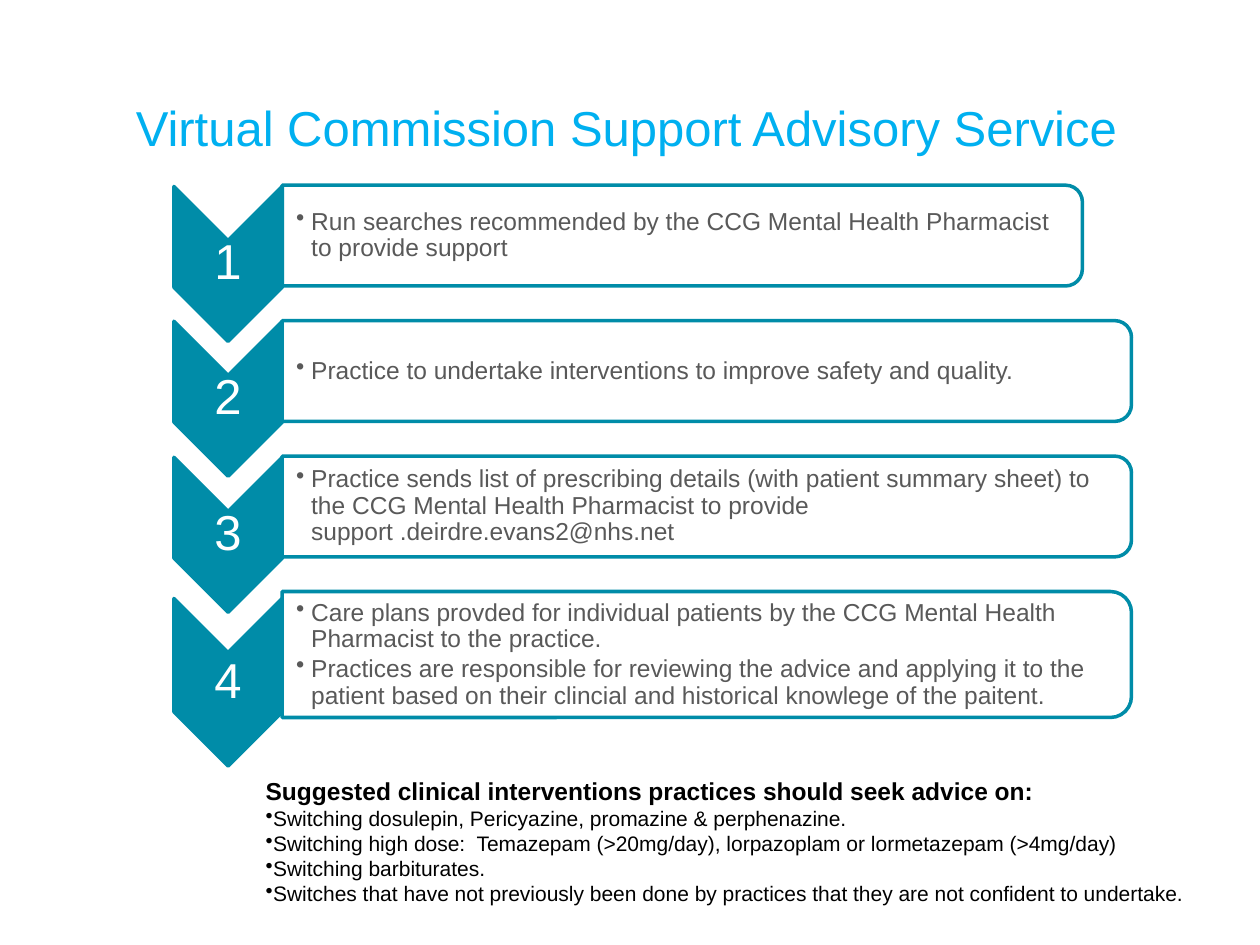
"""Build the Virtual Commission Support Advisory Service slide."""
import pptx
import pptx.util
import pptx.dml.color
import pptx.enum.shapes
import pptx.enum.text
import pptx.oxml.ns
from lxml import etree

Inches, Pt = pptx.util.Inches, pptx.util.Pt
SHAPE = pptx.enum.shapes.MSO_SHAPE
ALIGN = pptx.enum.text.PP_ALIGN
qn = pptx.oxml.ns.qn
TEAL = "008CA8"


def paint(color_format, value):
    color_format.rgb = pptx.dml.color.RGBColor.from_string(value)


def write(left, top, width, height, lines, size, color, align=None, insets=(0.1, 0.05, 0.1, 0.05),
          bullet_from=None, indent=0, spacing=None, after=None):
    frame = slide.shapes.add_textbox(Inches(left), Inches(top), Inches(width), Inches(height)).text_frame
    frame.word_wrap = True
    frame.vertical_anchor = pptx.enum.text.MSO_ANCHOR.MIDDLE
    frame.margin_left, frame.margin_top, frame.margin_right, frame.margin_bottom = map(Inches, insets)
    for index, line in enumerate(lines):
        paragraph = frame.paragraphs[0] if index == 0 else frame.add_paragraph()
        paragraph.text = line
        if bullet_from is not None and index >= bullet_from:
            properties = paragraph._p.get_or_add_pPr()
            properties.set("marL", str(Inches(indent)))
            properties.set("indent", str(-Inches(indent)))
            etree.SubElement(properties, qn("a:buChar")).set("char", "•")
        paragraph.alignment = align
        paragraph.line_spacing = spacing
        paragraph.space_after = after
        paragraph.font.name = "Arial"
        paragraph.font.size = Pt(size)
        paint(paragraph.font.color, color)
    return frame


prs = pptx.Presentation()
prs.slide_width, prs.slide_height = Inches(10), Inches(7.5)
slide = prs.slides.add_slide(prs.slide_layouts[6])

write(0.98, 0.72, 8.43, 0.57, ["Virtual Commission Support Advisory Service"], 28, "00B0F0")

steps = [
    (6.35, 0.8, 1.23, 1.48, ["Run searches recommended by the CCG Mental Health Pharmacist to provide support"]),
    (6.74, 0.8, 1.23, 2.55, ["Practice to undertake interventions to improve safety and quality."]),
    (6.74, 0.8, 1.23, 3.63, [
        "Practice sends list of prescribing details (with patient summary sheet) to the CCG Mental "
        "Health Pharmacist to provide support .deirdre.evans2@nhs.net"]),
    (6.74, 1, 1.33, 4.75, [
        "Care plans provded for individual patients by the CCG Mental Health Pharmacist to the practice.",
        "Practices are responsible for reviewing the advice and applying it to the patient based on "
        "their clincial and historical knowlege of the paitent."]),
]
chevron_left, chevron_width, panel_left = 1.38, 0.86, 2.24

for number, (panel_width, panel_height, chevron_height, chevron_top, lines) in enumerate(steps, 1):
    panel_top = 1.47 + 1.075 * (number - 1)
    parts = [
        (SHAPE.CHEVRON, chevron_left, chevron_top, chevron_width, chevron_height, TEAL),
        (SHAPE.ROUND_2_SAME_RECTANGLE, panel_left, panel_top, panel_width, panel_height, "FFFFFF"),
    ]
    for preset, left, top, width, height, fill in parts:
        part = slide.shapes.add_shape(
            preset, Inches(left + (width - height) / 2), Inches(top + (height - width) / 2),
            Inches(height), Inches(width))
        part.rotation = 90
        part.shadow.inherit = False
        part.fill.solid()
        paint(part.fill.fore_color, fill)
        paint(part.line.color, TEAL)
        part.line.width = Pt(2)
        if preset == SHAPE.ROUND_2_SAME_RECTANGLE:
            color = part.fill._xPr.find(qn("a:solidFill"))[0]
            etree.SubElement(color, qn("a:alpha")).set("val", "90000")
    write(chevron_left, chevron_top + chevron_width / 2, chevron_width, chevron_height - chevron_width,
          [str(number)], 28, "FFFFFF", ALIGN.CENTER, (0.02,) * 4, spacing=0.9)
    write(panel_left, panel_top + 0.04, panel_width - 0.04, panel_height - 0.08, lines, 14, "595959",
          insets=(0.11, 0.01, 0.01, 0.01), bullet_from=0, indent=0.12, spacing=0.9, after=Pt(2))

advice = write(2.01, 6.11, 7.55, 1.14, [
    "Suggested clinical interventions practices should seek advice on:",
    "Switching dosulepin, Pericyazine, promazine & perphenazine.",
    "Switching high dose:  Temazepam (>20mg/day), lorpazoplam or lormetazepam (>4mg/day)",
    "Switching barbiturates.",
    "Switches that have not previously been done by practices that they are not confident to undertake.",
], 12, "000000", ALIGN.JUSTIFY, bullet_from=1)
advice.word_wrap = False
advice.vertical_anchor = pptx.enum.text.MSO_ANCHOR.TOP
advice.paragraphs[0].font.size = Pt(14)
advice.paragraphs[0].font.bold = True

prs.save("out.pptx")
